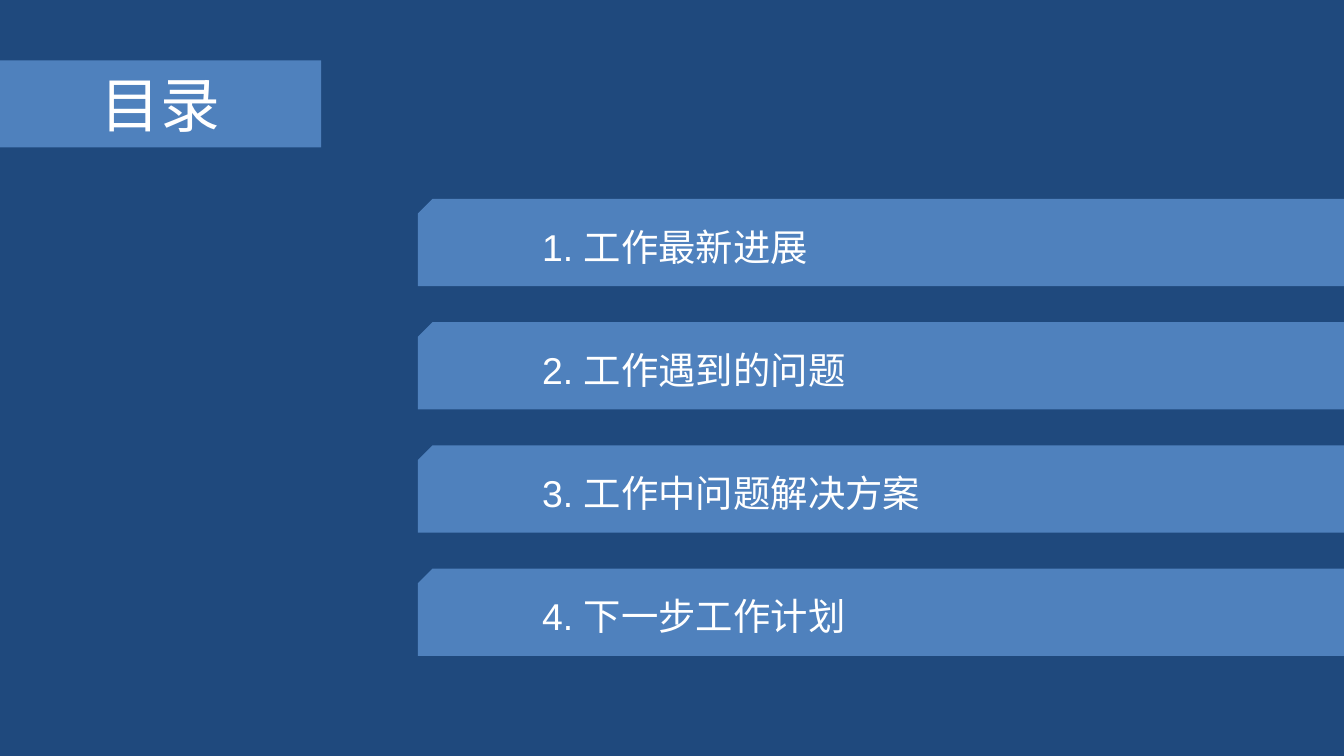
from pptx import Presentation
from pptx.dml.color import RGBColor
from pptx.enum.shapes import MSO_SHAPE
from pptx.enum.text import MSO_ANCHOR, PP_ALIGN
from pptx.util import Cm, Pt


def paint(fill, color):
    fill.solid()
    fill.fore_color.rgb = RGBColor.from_string(color)


def add_banner(page, preset, left, top, width, text, size, align):
    """Add a blue bar with one line of white text and return it."""
    banner = page.shapes.add_shape(preset, Cm(left), Cm(top), Cm(width), Cm(1.65))
    banner.shadow.inherit = False
    paint(banner.fill, "4F81BD")
    banner.line.fill.background()
    frame = banner.text_frame
    frame.word_wrap = True
    frame.vertical_anchor = MSO_ANCHOR.MIDDLE
    para = frame.paragraphs[0]
    para.alignment = align
    span = para.add_run()
    span.text = text
    span.font.name = "Arial"
    span.font.size = Pt(size)
    paint(span.font.fill, "FFFFFF")
    return banner


deck = Presentation()
deck.slide_width = Cm(25.4)
deck.slide_height = Cm(14.29)
page = deck.slides.add_slide(deck.slide_layouts[6])
paint(page.background.fill, "1F497D")

add_banner(page, MSO_SHAPE.RECTANGLE, 0, 1.14, 6.07, "目录", 32, PP_ALIGN.CENTER)

topics = ["工作最新进展", "工作遇到的问题", "工作中问题解决方案", "下一步工作计划"]
first_top, pitch = 3.76, 2.33
for index, topic in enumerate(topics):
    banner = add_banner(page, MSO_SHAPE.SNIP_1_RECTANGLE, 7.9, first_top + index * pitch,
                        17.5, f"{index + 1}. {topic}", 20, PP_ALIGN.LEFT)
    # Mirrored so that the cut corner is at the top left
    banner._element.spPr.xfrm.set("flipH", "1")
    banner.text_frame.margin_left = Cm(2.21)

deck.save("out.pptx")
